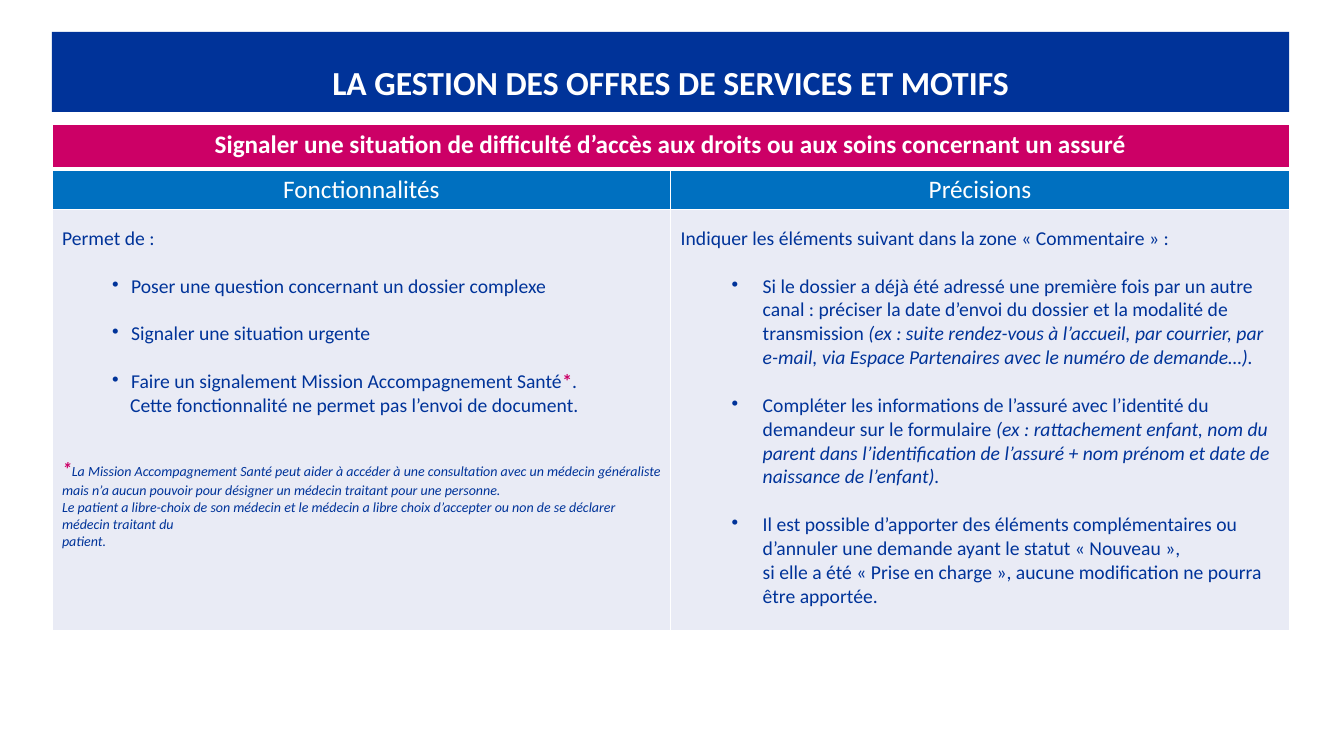
"""Build the slide on managing service offers and request reasons."""
from dataclasses import dataclass

import pptx
import pptx.dml.color
import pptx.enum.shapes
import pptx.enum.text
import pptx.oxml
import pptx.oxml.ns
import pptx.util

PX = 914400 / 100.8
COLORS = {"navy": "003399", "pink": "CC0066", "blue": "0070C0",
          "pale": "E9EBF5", "white": "FFFFFF"}
CENTER = pptx.enum.text.PP_ALIGN.CENTER
LEFT = pptx.enum.text.PP_ALIGN.LEFT


def px(length: float) -> int:
    return round(length * PX)


def rgb(color: str) -> pptx.dml.color.RGBColor:
    return pptx.dml.color.RGBColor.from_string(COLORS[color])


@dataclass(frozen=True)
class Span:
    text: str
    color: str | None = None
    size: int | None = None
    bold: bool | None = None
    italic: bool | None = None


@dataclass(frozen=True)
class Line:
    spans: tuple[Span, ...]
    size: int = 14
    color: str = "navy"
    bold: bool = False
    italic: bool = False
    align: int = LEFT
    spacing: float | None = None
    before: int = 0
    margin: int = 0
    hang: int = 0


@dataclass(frozen=True)
class Block:
    row: int
    column: int
    fill: str
    lines: tuple[Line, ...]


def heading(text: str, size: int, bold: bool, spacing: float | None = None) -> Line:
    return Line((Span(text),), size, "white", bold, align=CENTER, spacing=spacing)


def intro(text: str) -> Line:
    return Line((Span(text),), spacing=1.5)


def task(*spans: Span) -> Line:
    return Line(spans, before=17, margin=69, hang=19)


def detail(*spans: Span) -> Line:
    return Line(spans, before=17, margin=82, hang=31)


def footnote(*spans: Span, before: int = 0) -> Line:
    return Line(spans, size=10, italic=True, before=before)


def example(text: str) -> Span:
    return Span(text, italic=True)


def style_font(font, color: str | None, size: int | None,
               bold: bool | None, italic: bool | None) -> None:
    if size:
        font.size = pptx.util.Pt(size)
    if color:
        font.color.rgb = rgb(color)
    font.bold = bold
    font.italic = italic


def write(frame, lines: tuple[Line, ...]) -> None:
    for index, line in enumerate(lines):
        paragraph = frame.add_paragraph() if index else frame.paragraphs[0]
        paragraph.alignment = line.align
        if line.spacing:
            paragraph.line_spacing = line.spacing
        if line.before:
            paragraph.space_before = pptx.util.Pt(line.before)
        if line.margin:
            properties = paragraph._p.get_or_add_pPr()
            properties.set("marL", str(px(line.margin)))
            properties.set("indent", str(-px(line.hang)))
            if line.hang:
                bullet = pptx.oxml.ns.qn("a:buChar")
                properties.append(properties.makeelement(bullet, {"char": "•"}))
        paragraph.font.name = "Calibri"
        style_font(paragraph.font, line.color, line.size, line.bold, line.italic)
        for span in line.spans:
            run = paragraph.add_run()
            run.text = span.text
            style_font(run.font, span.color, span.size, span.bold, span.italic)


def draw_borders(cell, bottom: int) -> None:
    properties = cell._tc.get_or_add_tcPr()
    widths = {"lnL": 1, "lnR": 1, "lnT": 1, "lnB": bottom}
    for index, (side, width) in enumerate(widths.items()):
        properties.insert(index, pptx.oxml.parse_xml(
            f'<a:{side} {pptx.oxml.ns.nsdecls("a")} w="{pptx.util.Pt(width)}">'
            f'<a:solidFill><a:srgbClr val="{COLORS["white"]}"/></a:solidFill>'
            f'</a:{side}>'))


TASKS = (
    intro("Permet de :"),
    task(Span("Poser une question concernant un dossier complexe")),
    task(Span("Signaler une situation urgente")),
    task(Span("Faire un signalement Mission Accompagnement Santé"),
         Span("*", "pink", bold=True), Span(".")),
    Line((Span("Cette fonctionnalité ne permet pas l’envoi de document."),), margin=68),
    footnote(
        Span("*", "pink", 14, True),
        Span("La Mission Accompagnement Santé peut aider à accéder à une consultation "
             "avec un médecin généraliste mais n’a aucun pouvoir pour désigner un "
             "médecin traitant pour une personne."), before=29),
    footnote(Span("Le patient a libre-choix de son médecin et le médecin a libre choix "
                  "d’accepter ou non de se déclarer médecin traitant du")),
    footnote(Span("patient.")),
)
DETAILS = (
    intro("Indiquer les éléments suivant dans la zone « Commentaire » :"),
    detail(Span("Si le dossier a déjà été adressé une première fois par un autre canal : "
                "préciser la date d’envoi du dossier et la modalité de transmission "),
           example("(ex : suite rendez-vous à l’accueil, par courrier, par e-mail, "
                   "via Espace Partenaires avec le numéro de demande…).")),
    detail(Span("Compléter les informations de l’assuré avec l’identité du demandeur "
                "sur le formulaire "),
           example("(ex : rattachement enfant, nom du parent dans l’identification de "
                   "l’assuré + nom prénom et date de naissance de l’enfant).")),
    detail(Span("Il est possible d’apporter des éléments complémentaires ou d’annuler "
                "une demande ayant le statut « Nouveau »,")),
    Line((Span("si elle a été « Prise en charge », aucune modification ne pourra"),),
         margin=82),
    Line((Span("être apportée."),), margin=82),
)
BLOCKS = (
    Block(0, 0, "pink", (heading("Signaler une situation de difficulté d’accès aux droits "
                                 "ou aux soins concernant un assuré", 18, True),)),
    Block(1, 0, "blue", (heading("Fonctionnalités", 18, False),)),
    Block(1, 1, "blue", (heading("Précisions", 18, False),)),
    Block(2, 0, "pale", TASKS),
    Block(2, 1, "pale", DETAILS),
)
LEFT_EDGE, WIDTH = 52, 1237
ROW_HEIGHTS = (45, 40, 421)


def draw_title(slide) -> None:
    banner = slide.shapes.add_shape(pptx.enum.shapes.MSO_SHAPE.RECTANGLE,
                                    px(LEFT_EDGE), px(32), px(WIDTH), px(80))
    banner.shadow.inherit = False
    banner.fill.solid()
    banner.fill.fore_color.rgb = rgb("navy")
    banner.line.fill.background()
    banner.text_frame.vertical_anchor = pptx.enum.text.MSO_ANCHOR.MIDDLE
    write(banner.text_frame,
          (heading("LA GESTION DES OFFRES DE SERVICES ET MOTIFS", 24, True, 1.5),))


def draw_services(slide) -> None:
    services = slide.shapes.add_table(len(ROW_HEIGHTS), 2, px(LEFT_EDGE), px(124),
                                      px(WIDTH), px(sum(ROW_HEIGHTS))).table
    services.first_row = False
    services.horz_banding = False
    for row, height in zip(services.rows, ROW_HEIGHTS):
        row.height = px(height)
    services.cell(0, 0).merge(services.cell(0, 1))
    for block in BLOCKS:
        cell = services.cell(block.row, block.column)
        cell.fill.solid()
        cell.fill.fore_color.rgb = rgb(block.fill)
        draw_borders(cell, 1 if block.row else 3)
        write(cell.text_frame, block.lines)


def main() -> None:
    deck = pptx.Presentation()
    deck.slide_width = pptx.util.Inches(13.33)
    deck.slide_height = pptx.util.Inches(7.5)
    slide = deck.slides.add_slide(deck.slide_layouts[6])
    draw_title(slide)
    draw_services(slide)
    deck.save("out.pptx")


if __name__ == "__main__":
    main()
